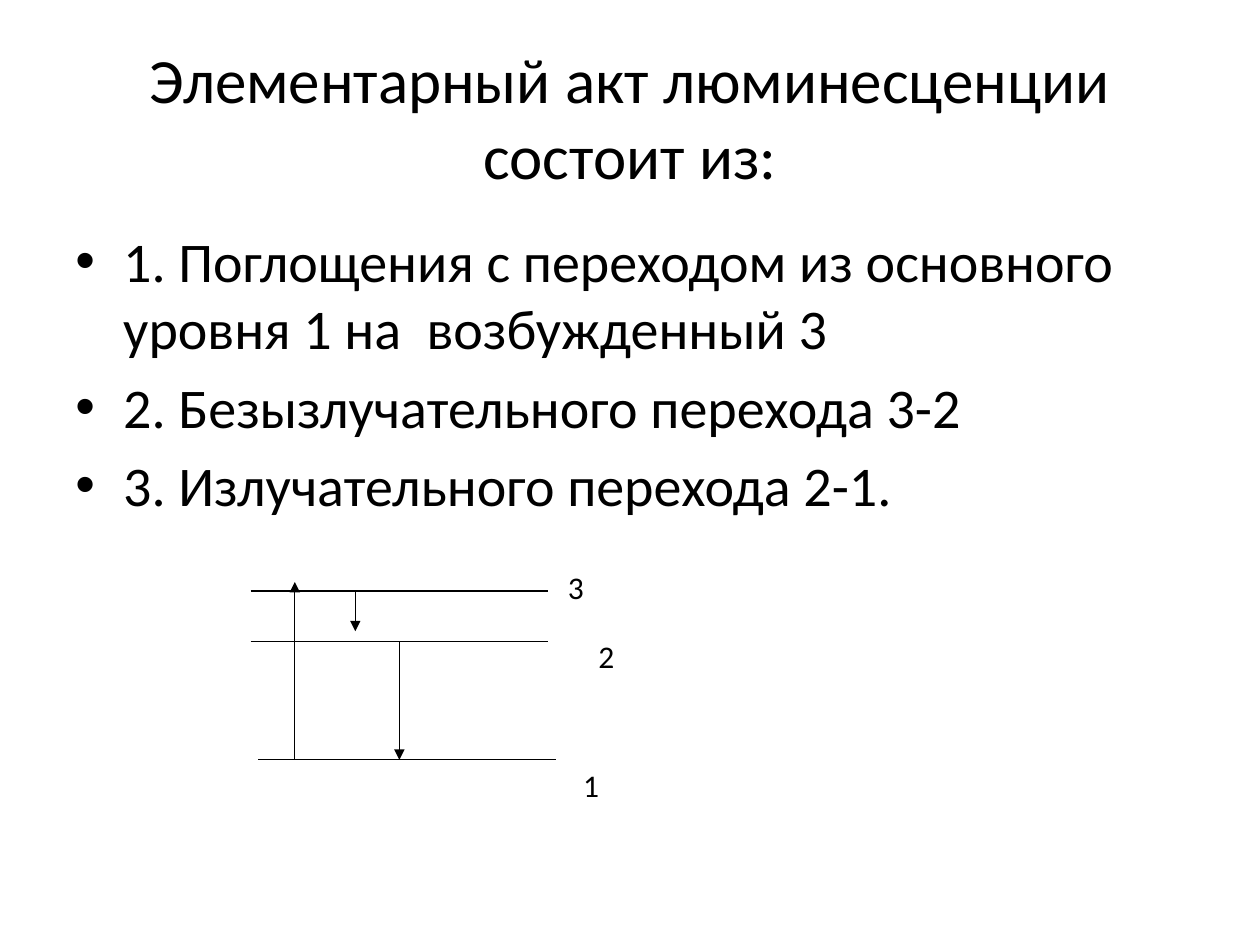
from lxml.etree import SubElement
from pptx import Presentation
from pptx.dml.color import RGBColor
from pptx.enum.shapes import MSO_CONNECTOR
from pptx.enum.text import MSO_ANCHOR, MSO_AUTO_SIZE, PP_ALIGN
from pptx.oxml.ns import qn
from pptx.util import Inches, Pt

COLORS = {"background": "FFFFFF", "ink": "000000"}
FONT = "Calibri"

presentation = Presentation()
presentation.slide_width, presentation.slide_height = Inches(10), Inches(7.5)
slide = presentation.slides.add_slide(presentation.slide_layouts[5])
slide.background.fill.solid()
slide.background.fill.fore_color.rgb = RGBColor.from_string(COLORS["background"])

# Grid of 100 columns by 100 rows
column = presentation.slide_width / 100
row = presentation.slide_height / 100


def write_text(shape, lines, box, size, align=PP_ALIGN.LEFT, anchor=MSO_ANCHOR.TOP,
               gap=0, bullet=None, auto_size=MSO_AUTO_SIZE.NONE):
    """Place a shape on the grid and fill it with formatted paragraphs."""
    left, top, width, height = box
    shape.left, shape.top = round(left * column), round(top * row)
    shape.width, shape.height = round(width * column), round(height * row)
    frame = shape.text_frame
    frame.text = "\n".join(lines)
    frame.word_wrap = True
    frame.auto_size = auto_size
    frame.vertical_anchor = anchor
    for index, paragraph in enumerate(frame.paragraphs):
        paragraph.alignment = align
        paragraph.space_before = Pt(gap if index else 0)
        if bullet:
            properties = paragraph._p.get_or_add_pPr()
            properties.set("marL", str(Inches(0.38)))
            properties.set("indent", str(-Inches(0.38)))
            SubElement(properties, qn("a:buFont"), typeface="Arial")
            SubElement(properties, qn("a:buChar"), char=bullet)
        paragraph.font.name = FONT
        paragraph.font.size = Pt(size)
        paragraph.font.color.rgb = RGBColor.from_string(COLORS["ink"])


def draw_line(start, end, arrow=False):
    """Draw a thin line between two grid points."""
    line = slide.shapes.add_connector(
        MSO_CONNECTOR.STRAIGHT,
        round(start[0] * column), round(start[1] * row),
        round(end[0] * column), round(end[1] * row))
    line.line.color.rgb = RGBColor.from_string(COLORS["ink"])
    line.line.width = Pt(0.75)
    if arrow:
        SubElement(line.line._get_or_add_ln(), qn("a:tailEnd"), type="triangle")
    SubElement(line._element.spPr, qn("a:effectLst"))


# Title
write_text(slide.shapes.title, ["Элементарный акт люминесценции состоит из:"],
           (5, 4, 90, 16.67), 36, align=PP_ALIGN.CENTER, anchor=MSO_ANCHOR.MIDDLE)

# Steps of the process
steps = [
    "1. Поглощения с переходом из основного уровня 1 на  возбужденный 3",
    "2. Безызлучательного перехода 3-2",
    "3. Излучательного перехода 2-1.",
]
write_text(slide.shapes.add_textbox(0, 0, 0, 0), steps, (5, 23.33, 90, 66), 32,
           gap=6.4, bullet="•")

# Energy levels: name, row, left column, label column, label row
level_rows = {"1": 80.4, "2": 67.87, "3": 62.53}
levels = [("1", 20.5, 45.3, 80.4), ("2", 19.9, 46.5, 66.8), ("3", 19.9, 44.1, 59.47)]
for name, left, label_left, label_top in levels:
    draw_line((left, level_rows[name]), (left + 23.6, level_rows[name]))
    write_text(slide.shapes.add_textbox(0, 0, 0, 0), [name],
               (label_left, label_top, 5.3, 5.33), 18,
               auto_size=MSO_AUTO_SIZE.SHAPE_TO_FIT_TEXT)

# Transitions: absorption, non-radiative, radiative
transitions = [
    (23.4, level_rows["1"], 61.6),
    (28.2, level_rows["3"], 66.8),
    (31.7, level_rows["2"], level_rows["1"]),
]
for x, start, end in transitions:
    draw_line((x, start), (x, end), arrow=True)

presentation.save("out.pptx")
